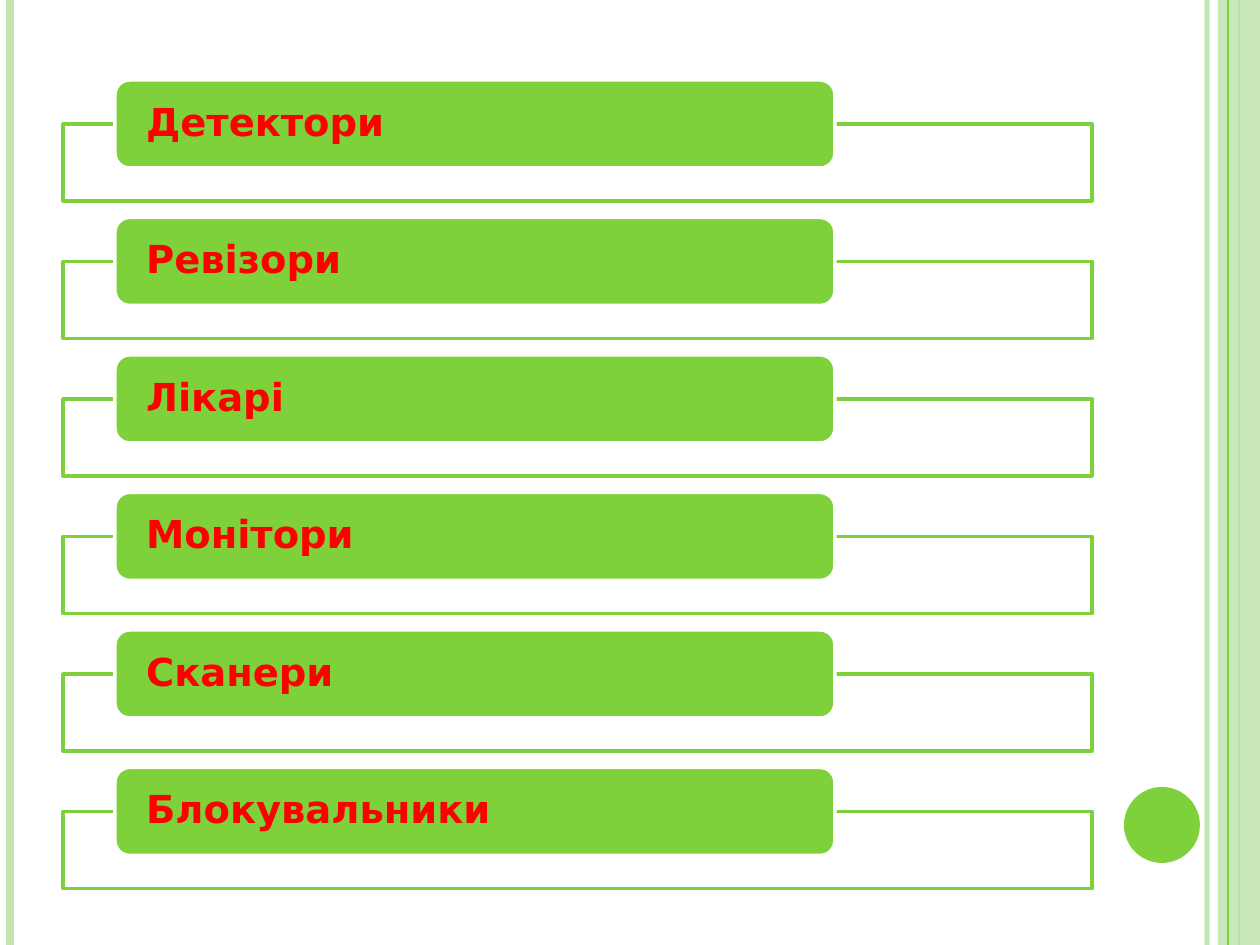
import pptx
import pptx.util
import pptx.dml.color
import pptx.enum.shapes
import pptx.enum.text
import pptx.oxml.ns
import lxml.etree

PX = 914400 // 126
WIDE, HIGH = 1260, 945
COLORS = {"green": "7FD13B", "pale": "C0E5AF", "white": "FFFFFF", "red": "FF0000"}
FONT = "DejaVu Sans"
LABELS = ["Детектори", "Ревізори", "Лікарі", "Монітори", "Сканери", "Блокувальники"]
TOP, PITCH = 80, 137.5
KINDS = pptx.enum.shapes.MSO_SHAPE


def px(num):
    return pptx.util.Emu(round(num * PX))


def tint(fill, name, alpha=100):
    """Set a solid color, with opacity in percent."""
    fill.solid()
    fill.fore_color.rgb = pptx.dml.color.RGBColor.from_string(COLORS[name])
    if alpha < 100:
        tag = pptx.oxml.ns.qn("a:srgbClr")
        for color in fill._xPr.iter(tag):
            part = lxml.etree.SubElement(color, pptx.oxml.ns.qn("a:alpha"))
            part.set("val", str(alpha * 1000))


def add_shape(slide, kind, box, fill, alpha=100, edge=None):
    shape = slide.shapes.add_shape(kind, *map(px, box))
    shape.shadow.inherit = False
    tint(shape.fill, fill, alpha)
    if edge:
        tint(shape.line.fill, edge)
        shape.line.width = pptx.util.Pt(2)
    else:
        shape.line.fill.background()
    return shape


def add_stripe(slide, left, color, width, alpha=100):
    """Draw a vertical line over the full height of the slide."""
    line = slide.shapes.add_connector(
        pptx.enum.shapes.MSO_CONNECTOR.STRAIGHT, px(left), 0, px(left), px(HIGH))
    tint(line.line.fill, color, alpha)
    line.line.width = pptx.util.Pt(width)
    lxml.etree.SubElement(line._element.spPr, pptx.oxml.ns.qn("a:effectLst"))


def add_label(shape, text):
    frame = shape.text_frame
    frame.word_wrap = True
    frame.vertical_anchor = pptx.enum.text.MSO_ANCHOR.MIDDLE
    frame.margin_left = frame.margin_right = px(27)
    frame.margin_top = frame.margin_bottom = 0
    para = frame.paragraphs[0]
    para.alignment = pptx.enum.text.PP_ALIGN.LEFT
    para.line_spacing = 0.9
    run = para.add_run()
    run.text = text
    run.font.name = FONT
    run.font.size = pptx.util.Pt(22)
    run.font.bold = True
    tint(run.font.fill, "red")


def add_row(slide, top, text):
    add_shape(slide, KINDS.RECTANGLE, (63, top + 44, 1029, 77), "white", 90, "green")
    tab = add_shape(slide, KINDS.ROUNDED_RECTANGLE, (115, top, 720, 88),
                    "green", edge="white")
    add_label(tab, text)


def add_border(slide):
    add_stripe(slide, 1207, "pale", 3, 93)
    add_stripe(slide, 10, "pale", 4.5)
    add_stripe(slide, 1239, "green", 1.5)
    add_shape(slide, KINDS.RECTANGLE, (1218, 0, 42, HIGH), "pale", 87)
    add_stripe(slide, 1228, "green", 0.75)
    add_shape(slide, KINDS.OVAL, (1124, 787, 76, 76), "green")


def main():
    deck = pptx.Presentation()
    deck.slide_width, deck.slide_height = px(WIDE), px(HIGH)
    slide = deck.slides.add_slide(deck.slide_layouts[6])
    tint(slide.background.fill, "white")
    add_border(slide)
    for row, text in enumerate(LABELS):
        add_row(slide, TOP + row * PITCH, text)
    deck.save("out.pptx")


if __name__ == "__main__":
    main()
